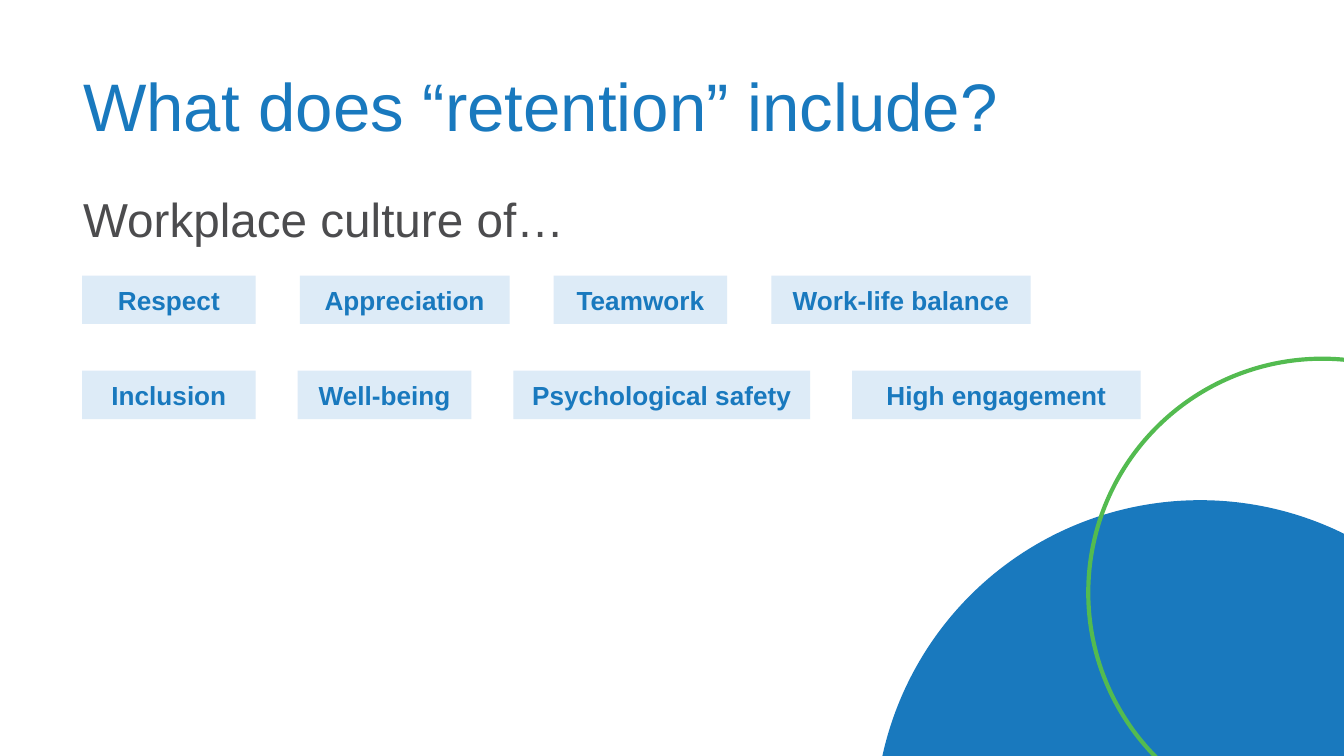
import pptx
import pptx.util
import pptx.dml.color
import pptx.enum.shapes
import pptx.enum.text

Pt = pptx.util.Pt
Shape = pptx.enum.shapes.MSO_SHAPE
Align = pptx.enum.text.PP_ALIGN
Anchor = pptx.enum.text.MSO_ANCHOR

# Content: each row holds its top, its gap, and its tags with their widths
TITLE = "What does “retention” include?"
LEAD = "Workplace culture of…"
ROWS = [
    (147.6, 23.6, [("Respect", 93), ("Appreciation", 112.4),
                   ("Teamwork", 93), ("Work-life balance", 139)]),
    (198.6, 22.5, [("Inclusion", 93), ("Well-being", 93),
                   ("Psychological safety", 159), ("High engagement", 154.6)]),
]

# Theme
THEME = {
    "font": "Arial", "blue": "1979BE", "green": "53BB50",
    "pale": "DDEBF7", "gray": "4C4C4E",
    "title": 36, "lead": 25.5, "tag": 14, "ring": 2.25,
}
LEFT, HIGH = 44, 26


def color(name):
    return pptx.dml.color.RGBColor.from_string(THEME[name])


def write(shape, text, size, ink, pad, anchor, bold=False, align=None, lead=None):
    frame = shape.text_frame
    form = {"word_wrap": True, "vertical_anchor": anchor,
            "margin_left": Pt(7.2), "margin_right": Pt(7.2),
            "margin_top": Pt(pad), "margin_bottom": Pt(pad)}
    for key, val in form.items():
        setattr(frame, key, val)
    para = frame.paragraphs[0]
    para.alignment, para.line_spacing = align, lead
    run = para.add_run()
    run.text = text
    for key, val in {"name": THEME["font"], "size": Pt(THEME[size]),
                     "bold": bold}.items():
        setattr(run.font, key, val)
    run.font.color.rgb = color(ink)


def draw(slide, kind, box, fill=None, line=None):
    shape = slide.shapes.add_shape(kind, *map(Pt, box))
    shape.shadow.inherit = False
    if fill:
        shape.fill.solid()
        shape.fill.fore_color.rgb = color(fill)
    else:
        shape.fill.background()
    if line:
        shape.line.color.rgb = color(line)
        shape.line.width = Pt(THEME["ring"])
    else:
        shape.line.fill.background()
    return shape


def main():
    deck = pptx.Presentation()
    deck.slide_width, deck.slide_height = Pt(720), Pt(405)
    slide = deck.slides.add_slide(deck.slide_layouts[6])

    # Corner circles
    draw(slide, Shape.OVAL, (468.7, 268, 348.5, 348.5), fill="blue")
    draw(slide, Shape.OVAL, (583, 192.2, 250.6, 250.6), line="green")

    # Title and lead line
    head = slide.shapes.add_textbox(Pt(37.4), Pt(19.4), Pt(620.6), Pt(78.5))
    write(head, TITLE, "title", "blue", 3.6, Anchor.MIDDLE, lead=0.9)
    lead = slide.shapes.add_textbox(Pt(37.4), Pt(98), Pt(601.2), Pt(272))
    write(lead, LEAD, "lead", "gray", 3.6, Anchor.TOP)

    # Rows of tags
    for top, gap, tags in ROWS:
        left = LEFT
        for text, wide in tags:
            tag = draw(slide, Shape.RECTANGLE, (left, top, wide, HIGH), fill="pale")
            write(tag, text, "tag", "blue", 7.2, Anchor.MIDDLE,
                  bold=True, align=Align.CENTER)
            left += wide + gap

    deck.save("out.pptx")


if __name__ == "__main__":
    main()
